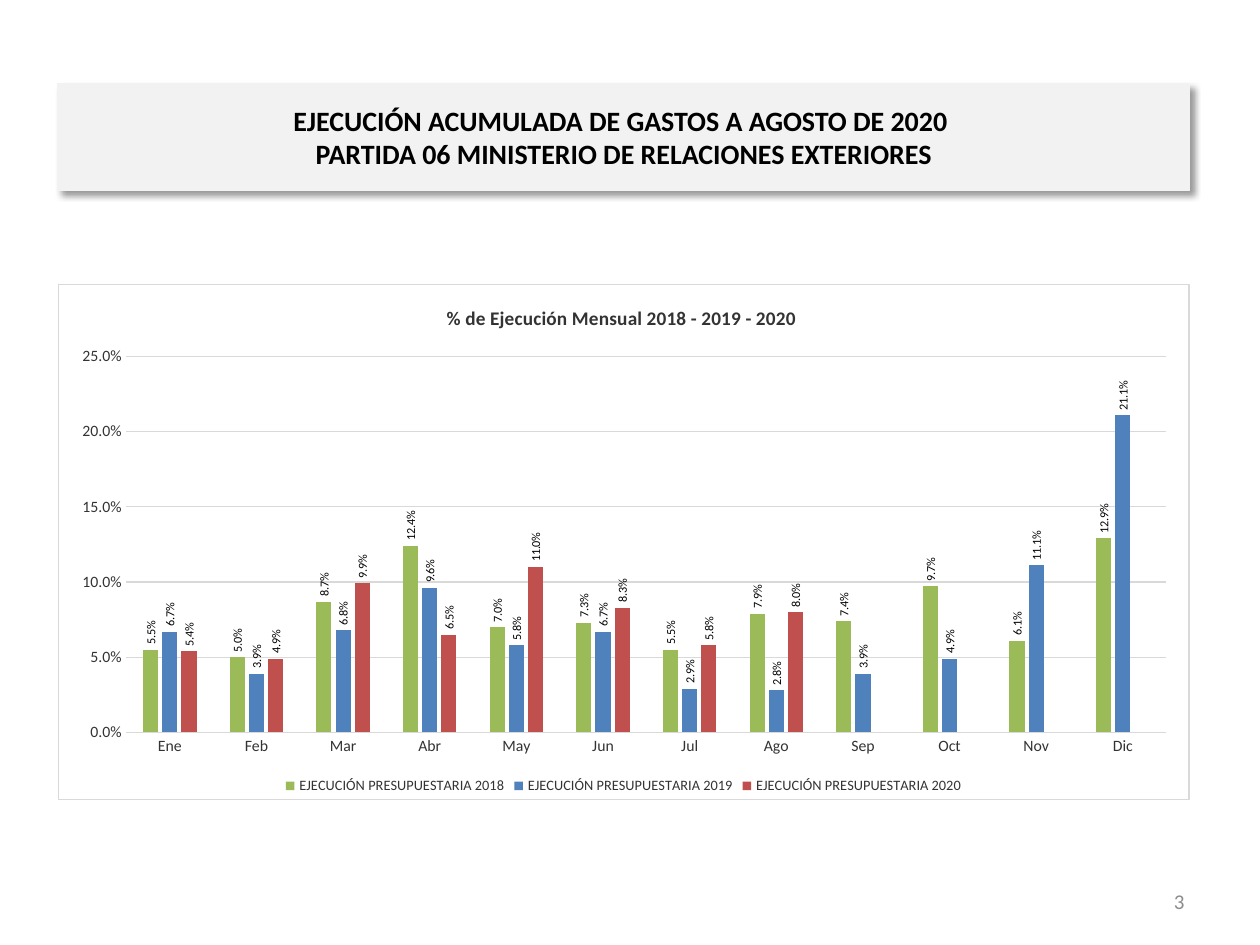
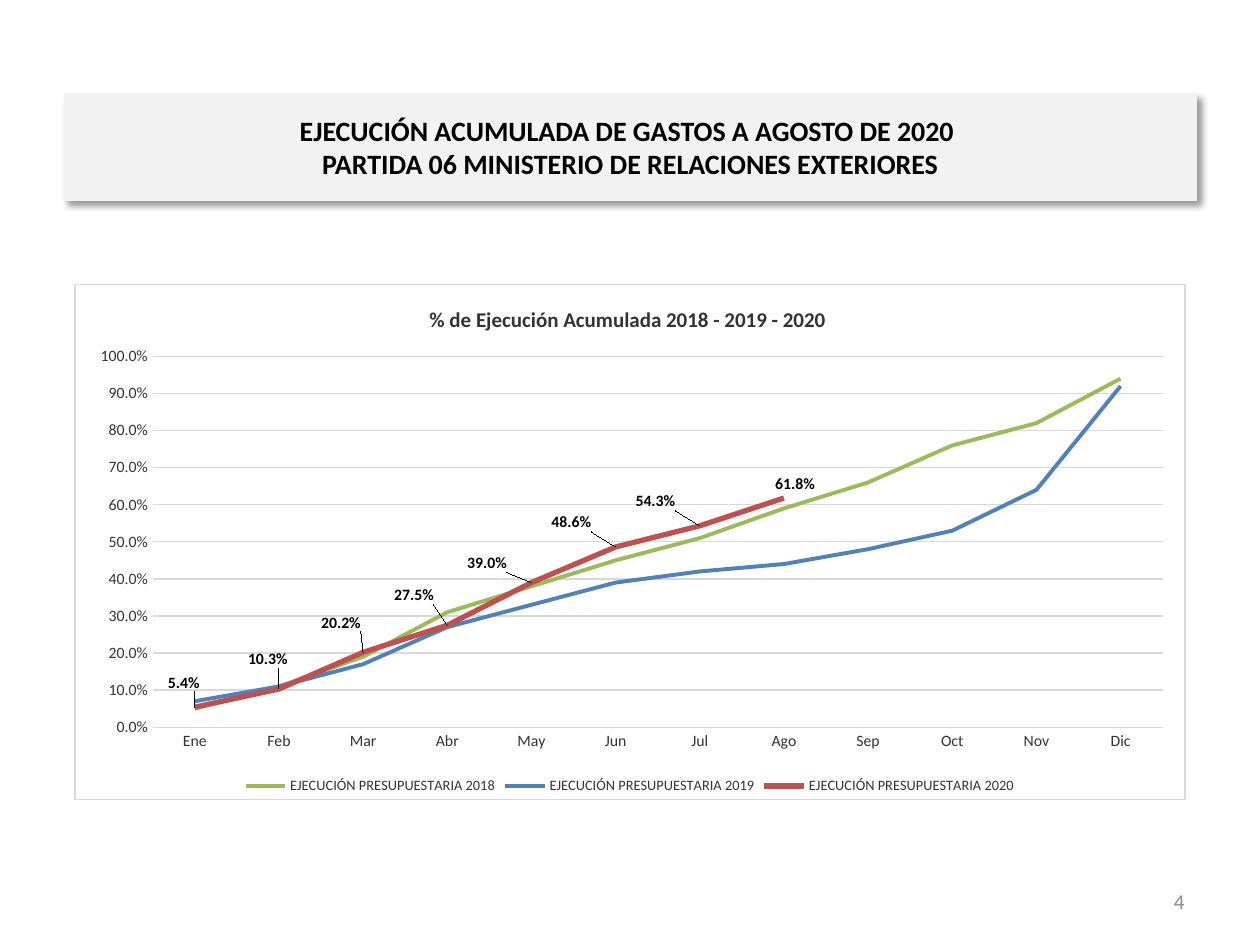
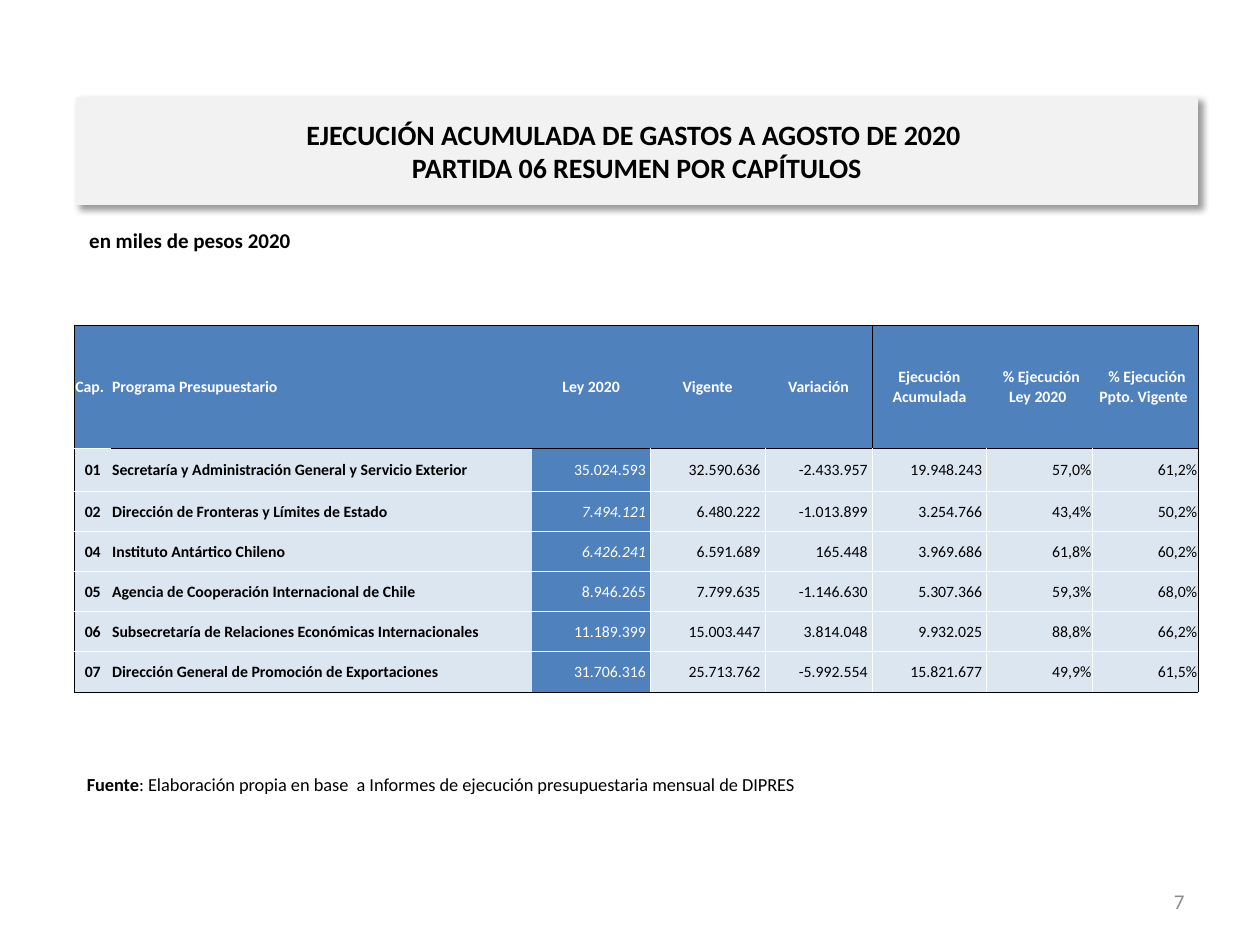
import lxml.etree
import pptx
import pptx.chart.data
import pptx.dml.color
import pptx.enum.chart
import pptx.enum.text
import pptx.oxml
import pptx.oxml.ns
import pptx.util

Cm = pptx.util.Cm
Pt = pptx.util.Pt
RGBColor = pptx.dml.color.RGBColor
Align = pptx.enum.text.PP_ALIGN
Anchor = pptx.enum.text.MSO_ANCHOR
qn = pptx.oxml.ns.qn

BLACK = RGBColor(0x00, 0x00, 0x00)
WHITE = RGBColor(0xFF, 0xFF, 0xFF)
BAND = RGBColor(0xF2, 0xF2, 0xF2)
DARK_GRAY = RGBColor(0x33, 0x33, 0x33)
NUMBER_GRAY = RGBColor(0x8C, 0x8C, 0x8C)
GRID_GRAY = RGBColor(0xD9, 0xD9, 0xD9)
GREEN = RGBColor(0x9B, 0xBB, 0x59)
BLUE = RGBColor(0x4F, 0x81, 0xBD)
RED = RGBColor(0xC0, 0x50, 0x4D)
PALE_BLUE = RGBColor(0xDC, 0xE6, 0xF1)
FONT = "Calibri"
NAMESPACES = " ".join(pptx.oxml.ns.nsdecls(prefix) for prefix in ("a", "c"))
MONTHS = ["Ene", "Feb", "Mar", "Abr", "May", "Jun", "Jul", "Ago", "Sep", "Oct", "Nov", "Dic"]
YEARS = {"2018": GREEN, "2019": BLUE, "2020": RED}
HEADING = "EJECUCIÓN ACUMULADA DE GASTOS A AGOSTO DE 2020 \v"
MINISTRY = HEADING + "PARTIDA 06 MINISTERIO DE RELACIONES EXTERIORES"


def add_page(deck, number, heading, left, top, width):
    page = deck.slides.add_slide(deck.slide_layouts[5])
    title = page.shapes.title
    title.left, title.top, title.width, title.height = Cm(left), Cm(top), Cm(width), Cm(2.16)
    title.fill.solid()
    title.fill.fore_color.rgb = BAND
    title.line.color.rgb = BAND
    title.line.width = Pt(0.75)
    title.shadow.inherit = False
    title._element.spPr.find(qn("a:effectLst")).append(pptx.oxml.parse_xml(
        f'<a:outerShdw {NAMESPACES} blurRad="50800" dist="38100" dir="2700000" algn="tl" rotWithShape="0">'
        '<a:srgbClr val="000000"><a:alpha val="40000"/></a:srgbClr></a:outerShdw>'))
    title.text_frame.text = heading
    title.text_frame.auto_size = pptx.enum.text.MSO_AUTO_SIZE.NONE
    title.text_frame.vertical_anchor = Anchor.MIDDLE
    para = title.text_frame.paragraphs[0]
    para.alignment = Align.CENTER
    lxml.etree.SubElement(para._p.find(qn("a:br")), qn("a:rPr"), sz="1600")
    number_box = page.shapes.add_textbox(Cm(18.21), Cm(17.65), Cm(5.92), Cm(1.02))
    number_box.text_frame.text = number
    number_box.text_frame.word_wrap = True
    number_box.text_frame.vertical_anchor = Anchor.MIDDLE
    number_para = number_box.text_frame.paragraphs[0]
    number_para.alignment = Align.RIGHT
    for spans, size, color, bold in ((para.runs, 16, BLACK, True), (number_para.runs, 12, NUMBER_GRAY, False)):
        for span in spans:
            span.font.name = FONT
            span.font.size = Pt(size)
            span.font.bold = bold
            span.font.color.rgb = color
    return page


def add_budget_chart(page, kind, heading, heading_size, values, left, width, maximum, step, plot):
    data = pptx.chart.data.CategoryChartData(number_format="0.0%")
    data.categories = MONTHS
    for year, amounts in zip(YEARS, values):
        data.add_series(f"EJECUCIÓN PRESUPUESTARIA {year}", amounts)
    chart = page.shapes.add_chart(kind, Cm(left), Cm(5.72), Cm(width), Cm(10.41), data).chart
    chart.font.name = FONT
    chart.font.size = Pt(10)
    chart.font.color.rgb = BLACK
    chart._chartSpace.find(qn("c:txPr")).addprevious(pptx.oxml.parse_xml(
        f'<c:spPr {NAMESPACES}><a:solidFill><a:srgbClr val="{WHITE}"/></a:solidFill>'
        f'<a:ln w="9525"><a:solidFill><a:srgbClr val="{GRID_GRAY}"/></a:solidFill></a:ln></c:spPr>'))

    chart.has_title = True
    chart.chart_title.text_frame.text = heading
    chart.chart_title.include_in_layout = False
    title_font = chart.chart_title.text_frame.paragraphs[0].runs[0].font
    title_font.bold = True
    chart.has_legend = True
    chart.legend.position = pptx.enum.chart.XL_LEGEND_POSITION.BOTTOM
    chart.legend.include_in_layout = False
    months, percent = chart.category_axis, chart.value_axis
    for font, size in ((title_font, heading_size), (chart.legend.font, 8.2),
                       (months.tick_labels.font, 9), (percent.tick_labels.font, 9)):
        font.name = FONT
        font.size = Pt(size)
        font.color.rgb = DARK_GRAY
    for axis in (months, percent):
        axis.major_tick_mark = pptx.enum.chart.XL_TICK_MARK.NONE
        axis.minor_tick_mark = pptx.enum.chart.XL_TICK_MARK.NONE
    percent.minimum_scale = 0
    percent.maximum_scale = maximum
    percent.major_unit = step
    percent.tick_labels.number_format = "0.0%"
    percent.tick_labels.number_format_is_linked = False
    percent.format.line.fill.background()
    for line in (months.format.line, percent.major_gridlines.format.line):
        line.color.rgb = GRID_GRAY
        line.width = Pt(0.75)

    area = chart._chartSpace.chart.plotArea
    for layout in area.findall(qn("c:layout")):
        area.remove(layout)
    sides = "".join(f'<c:{side} val="{share}"/>' for side, share in zip("xywh", plot))
    area.insert(0, pptx.oxml.parse_xml(
        f'<c:layout {NAMESPACES}><c:manualLayout><c:layoutTarget val="inner"/>'
        f'<c:xMode val="edge"/><c:yMode val="edge"/>{sides}</c:manualLayout></c:layout>'))
    return chart


deck = pptx.Presentation()
deck.slide_width = Cm(25.4)
deck.slide_height = Cm(19.05)

monthly = [
    (0.055, 0.05, 0.087, 0.124, 0.07, 0.073, 0.055, 0.079, 0.074, 0.097, 0.061, 0.129),
    (0.067, 0.039, 0.068, 0.096, 0.058, 0.067, 0.029, 0.028, 0.039, 0.049, 0.111, 0.211),
    (0.054, 0.049, 0.099, 0.065, 0.11, 0.083, 0.058, 0.08),
]
page = add_page(deck, "3", MINISTRY, 1.17, 1.68, 22.81)
chart = add_budget_chart(
    page, pptx.enum.chart.XL_CHART_TYPE.COLUMN_CLUSTERED, "% de Ejecución Mensual 2018 - 2019 - 2020 ", 11,
    monthly, 1.17, 22.81, 0.25, 0.05, (0.06, 0.14, 0.92, 0.73))
columns = chart.plots[0]
columns.gap_width = 219
columns.overlap = -27
columns.vary_by_categories = False
for series, color in zip(columns.series, YEARS.values()):
    series.format.fill.solid()
    series.format.fill.fore_color.rgb = color
    labels = series.data_labels
    labels.show_value = True
    labels.number_format = "0.0%"
    labels.number_format_is_linked = False
    labels.position = pptx.enum.chart.XL_LABEL_POSITION.OUTSIDE_END
    labels.font.name = FONT
    labels.font.size = Pt(7)
    labels.font.color.rgb = BLACK
    turn = labels._element.find(qn("c:txPr")).find(qn("a:bodyPr"))
    turn.set("rot", "-5400000")
    turn.set("vert", "horz")

accumulated = [
    (0.05, 0.11, 0.19, 0.31, 0.38, 0.45, 0.51, 0.59, 0.66, 0.76, 0.82, 0.94),
    (0.07, 0.11, 0.17, 0.27, 0.33, 0.39, 0.42, 0.44, 0.48, 0.53, 0.64, 0.92),
    (0.054, 0.103, 0.202, 0.275, 0.39, 0.486, 0.543, 0.618),
]
page = add_page(deck, "4", MINISTRY, 1.3, 1.88, 22.81)
chart = add_budget_chart(
    page, pptx.enum.chart.XL_CHART_TYPE.LINE, "% de Ejecución Acumulada 2018 - 2019 - 2020 ", 12,
    accumulated, 1.5, 22.4, 1, 0.1, (0.07, 0.14, 0.91, 0.72))
chart.plots[0].vary_by_categories = False
for series, color, weight in zip(chart.plots[0].series, YEARS.values(), (2.25, 2.25, 3)):
    series.smooth = False
    series.format.line.color.rgb = color
    series.format.line.width = Pt(weight)
current_year = chart.plots[0].series[2]
label_shifts = [(-0.01, -0.02), (-0.01, -0.03), (-0.02, -0.03), (-0.03, -0.03),
                (-0.04, -0.01), (-0.04, -0.02), (-0.04, -0.02), (0.01, 0)]
for index, (across, down) in enumerate(label_shifts):
    label = current_year.points[index].data_label
    label.font.name = FONT
    label.font.size = Pt(9)
    label.font.bold = True
    label.font.color.rgb = BLACK
    label.position = pptx.enum.chart.XL_LABEL_POSITION.ABOVE
for entry, (across, down) in zip(current_year.data_labels._element.findall(qn("c:dLbl")), label_shifts):
    entry.find(qn("c:idx")).addnext(pptx.oxml.parse_xml(
        f'<c:layout {NAMESPACES}><c:manualLayout><c:x val="{across}"/><c:y val="{down}"/>'
        '</c:manualLayout></c:layout>'))
labels = current_year.data_labels
labels.show_value = True
labels.number_format = "0.0%"
labels.number_format_is_linked = False
labels.font.name = FONT
labels.font.size = Pt(9)
labels.font.bold = True
labels.font.color.rgb = BLACK

page = add_page(deck, "7", HEADING + "PARTIDA 06 RESUMEN POR CAPÍTULOS", 1.55, 1.96, 22.58)
notes = [
    (1.55, 4.47, 21.84, 0.56, 12, [("en miles de pesos 2020", True)]),
    (1.5, 15.47, 21.97, 0.66, 10.5,
     [("Fuente", True),
      (": Elaboración propia en base  a Informes de ejecución presupuestaria mensual de DIPRES", False)]),
]
for left, top, width, height, size, pieces in notes:
    box = page.shapes.add_textbox(Cm(left), Cm(top), Cm(width), Cm(height))
    box.text_frame.word_wrap = True
    for text, bold in pieces:
        span = box.text_frame.paragraphs[0].add_run()
        span.text = text
        span.font.name = FONT
        span.font.size = Pt(size)
        span.font.bold = bold
        span.font.color.rgb = BLACK

chapters = [
    ("Cap.", "Programa Presupuestario", "Ley 2020", "Vigente", "Variación", "Ejecución Acumulada",
     " % Ejecución Ley 2020 ", " % Ejecución Ppto. Vigente "),
    ("01", "Secretaría y Administración General y Servicio Exterior",
     "35.024.593 ", "32.590.636 ", "-2.433.957 ", "19.948.243 ", "57,0%", "61,2%"),
    ("02", "Dirección de Fronteras y Límites de Estado",
     "7.494.121 ", "6.480.222 ", "-1.013.899 ", "3.254.766 ", "43,4%", "50,2%"),
    ("04", "Instituto Antártico Chileno",
     "6.426.241 ", "6.591.689 ", "165.448 ", "3.969.686 ", "61,8%", "60,2%"),
    ("05", "Agencia de Cooperación Internacional de Chile",
     "8.946.265 ", "7.799.635 ", "-1.146.630 ", "5.307.366 ", "59,3%", "68,0%"),
    ("06", "Subsecretaría de Relaciones Económicas Internacionales",
     "11.189.399 ", "15.003.447 ", "3.814.048 ", "9.932.025 ", "88,8%", "66,2%"),
    ("07", "Dirección General de Promoción de Exportaciones",
     "31.706.316 ", "25.713.762 ", "-5.992.554 ", "15.821.677 ", "49,9%", "61,5%"),
]
column_widths = [0.74, 8.48, 2.39, 2.31, 2.16, 2.31, 2.13, 2.13]
row_heights = [2.49, 0.86] + [0.81] * 5
last_row, last_column = len(row_heights) - 1, len(column_widths) - 1
table = page.shapes.add_table(len(row_heights), len(column_widths), Cm(1.5), Cm(6.55),
                              Cm(sum(column_widths)), Cm(sum(row_heights))).table
table.horz_banding = False
for column, width in zip(table.columns, column_widths):
    column.width = Cm(width)
for row, height in zip(table.rows, row_heights):
    row.height = Cm(height)

for row, chapter in enumerate(chapters):
    for column, text in enumerate(chapter):
        cell = table.cell(row, column)
        header = row == 0
        inner = None if header or column < 2 else WHITE
        borders = {
            "lnL": BLACK if column == 0 or (header and column == 5) else inner if column > 2 else None,
            "lnR": BLACK if column == last_column or (header and column == 4) else inner,
            "lnT": BLACK if header or (row == 1 and column > 0) else WHITE,
            "lnB": BLACK if row == last_row or (header and column > 0) else WHITE,
        }
        properties = cell._tc.get_or_add_tcPr()
        for side, color in borders.items():
            paint = f'<a:solidFill><a:srgbClr val="{color}"/></a:solidFill>' if color else "<a:noFill/>"
            properties.append(pptx.oxml.parse_xml(f'<a:{side} {NAMESPACES} w="6350">{paint}</a:{side}>'))
        blue_cell = header or column == 2
        cell.fill.solid()
        cell.fill.fore_color.rgb = BLUE if blue_cell else PALE_BLUE
        cell.margin_left = cell.margin_right = cell.margin_top = Cm(0.02)
        cell.margin_bottom = 0
        cell.vertical_anchor = Anchor.MIDDLE
        cell.text_frame.text = text
        para = cell.text_frame.paragraphs[0]
        if header:
            para.alignment = Align.CENTER if column > 1 else Align.LEFT
        else:
            para.alignment = (Align.CENTER, Align.LEFT)[column] if column < 2 else Align.RIGHT
        font = para.runs[0].font
        font.name = FONT
        font.size = Pt(9)
        font.bold = header or column < 2
        font.italic = column == 2 and row in (2, 3)
        font.color.rgb = WHITE if blue_cell else BLACK

deck.save("out.pptx")
